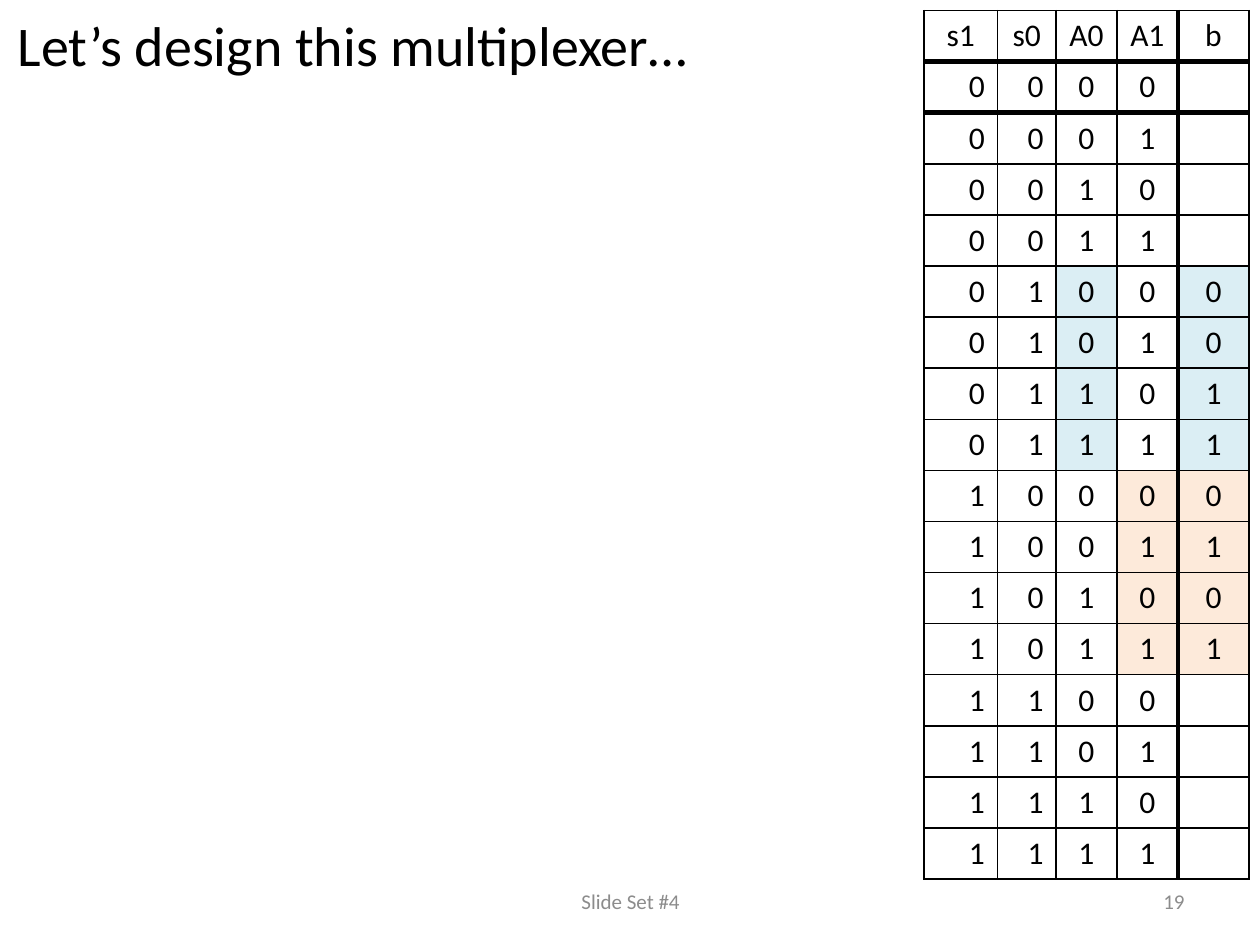
"""Build a slide with the truth table of a two-input multiplexer."""
import itertools

import pptx
import pptx.dml.color
import pptx.enum.text
import pptx.oxml
import pptx.oxml.ns
import pptx.util

Pt = pptx.util.Pt
ALIGN = pptx.enum.text.PP_ALIGN
MIDDLE = pptx.enum.text.MSO_ANCHOR.MIDDLE

TITLE = "Let’s design this multiplexer…"
FOOTERS = [
    ("19", 516.24, 167.76, ALIGN.RIGHT),
    ("Slide Set #4", 246.24, 228.24, ALIGN.CENTER),
]
HEADERS = ["s1", "s0", "A0", "A1", "b"]
COLUMN_WIDTHS = [41.9, 33.6, 34.7, 34.9, 40.7]
ROW_HEIGHT = 29.2
SELECTIONS = {(0, 1): (2, "DBEEF4"), (1, 0): (3, "FDEADA")}
OUTPUT = 4
THIN, THICK = 1, 3
THICK_RULES = (1, 2)


def color(value):
    return pptx.dml.color.RGBColor.from_string(value)


def write(frame, text, size, value, alignment):
    paragraph = frame.paragraphs[0]
    paragraph.alignment = alignment
    run = paragraph.add_run()
    run.text = text
    run.font.size = Pt(size)
    run.font.name = "Calibri"
    run.font.color.rgb = color(value)


def set_borders(cell, widths):
    properties = cell._tc.get_or_add_tcPr()
    namespace = pptx.oxml.ns.nsdecls("a")
    for index, (side, width) in enumerate(widths.items()):
        properties.insert(index, pptx.oxml.parse_xml(
            f'<a:ln{side} {namespace} w="{Pt(width)}"><a:solidFill>'
            f'<a:srgbClr val="000000"/></a:solidFill></a:ln{side}>'))


def truth_rows():
    rows = [[(name, None) for name in HEADERS]]
    for bits in itertools.product((0, 1), repeat=4):
        source, fill = SELECTIONS.get(bits[:2], (None, None))
        output = "" if source is None else str(bits[source])
        values = [str(bit) for bit in bits] + [output]
        rows.append([(value, fill if column in (source, OUTPUT) else None)
                     for column, value in enumerate(values)])
    return rows


def add_truth_table(slide):
    rows = truth_rows()
    table = slide.shapes.add_table(
        len(rows), len(HEADERS), Pt(528), Pt(6), Pt(sum(COLUMN_WIDTHS)),
        Pt(ROW_HEIGHT * len(rows))).table
    table.first_row = table.horz_banding = False
    for column, width in zip(table.columns, COLUMN_WIDTHS):
        column.width = Pt(width)
    for row, values in enumerate(rows):
        table.rows[row].height = Pt(ROW_HEIGHT)
        for column, (text, fill) in enumerate(values):
            cell = table.cell(row, column)
            if fill:
                cell.fill.solid()
                cell.fill.fore_color.rgb = color(fill)
            else:
                cell.fill.background()
            set_borders(cell, {
                "L": THICK if column == OUTPUT else THIN,
                "R": THICK if column == OUTPUT - 1 else THIN,
                "T": THICK if row in THICK_RULES else THIN,
                "B": THICK if row + 1 in THICK_RULES else THIN,
            })
            if text:
                right = row > 0 and column < 2
                write(cell.text_frame, text, 18, "000000",
                      ALIGN.RIGHT if right else ALIGN.CENTER)


def main():
    presentation = pptx.Presentation()
    presentation.slide_width, presentation.slide_height = Pt(720), Pt(540)
    slide = presentation.slides.add_slide(presentation.slide_layouts[5])
    title = slide.shapes.title
    title.left, title.top, title.width, title.height = Pt(3), Pt(10.8), Pt(648), Pt(28.8)
    title.text_frame.vertical_anchor = MIDDLE
    write(title.text_frame, TITLE, 32, "000000", ALIGN.LEFT)
    for text, left, width, alignment in FOOTERS:
        box = slide.shapes.add_textbox(Pt(left), Pt(500.5), Pt(width), Pt(28.75))
        box.text_frame.word_wrap = True
        box.text_frame.vertical_anchor = MIDDLE
        write(box.text_frame, text, 12, "8C8C8C", alignment)
    add_truth_table(slide)
    presentation.save("out.pptx")


if __name__ == "__main__":
    main()
